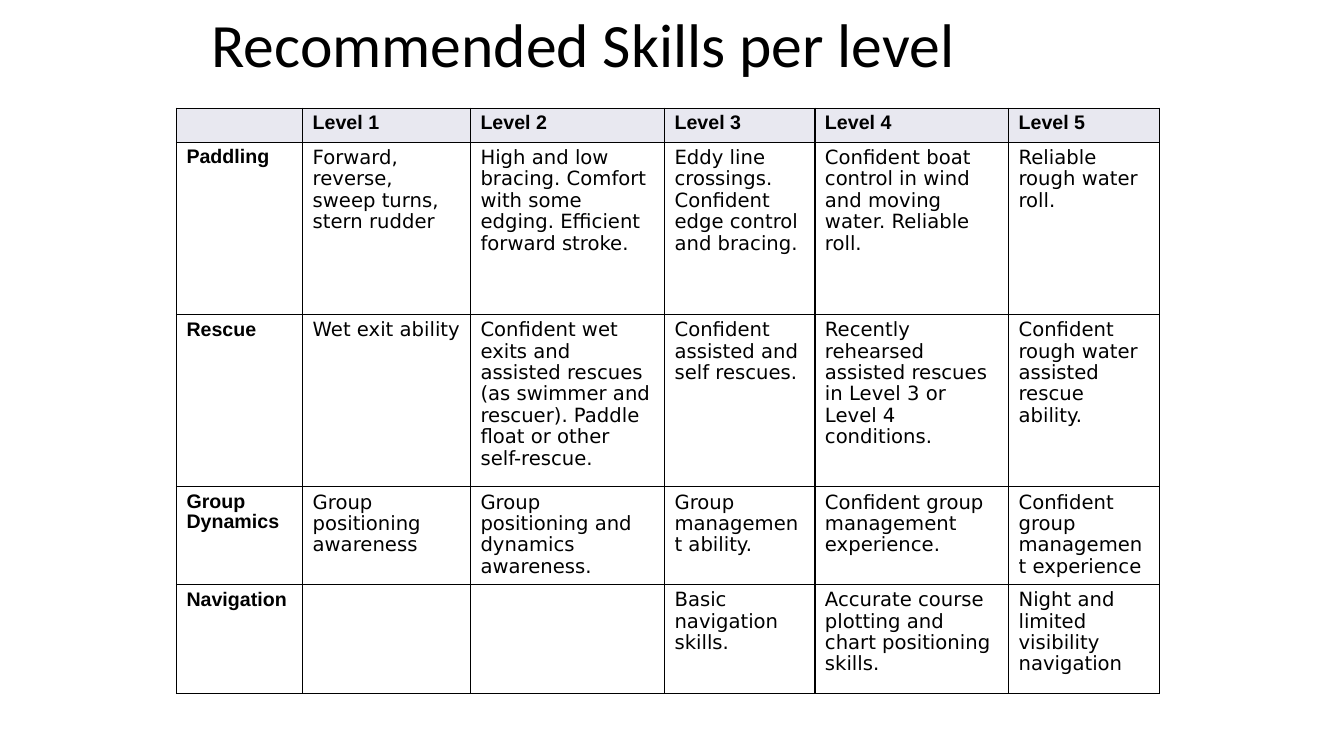
from dataclasses import dataclass

from lxml.etree import SubElement
from pptx import Presentation
from pptx.dml.color import RGBColor
from pptx.enum.text import MSO_ANCHOR
from pptx.oxml.ns import qn
from pptx.util import Cm, Pt


@dataclass(frozen=True)
class Theme:
    ink: str = "000000"
    head: str = "E8E8F0"
    title: int = 44
    body: int = 14
    edge: int = 1
    display: str = "Calibri"
    label: str = "Arial"
    prose: str = "DejaVu Sans"


THEME = Theme()
WIDTHS = [3.18, 4.23, 4.89, 3.79, 4.88, 3.81]
HEIGHTS = [0.84, 4.34, 4.34, 2.46, 2.74]
SKILLS = [
    ["", "Level 1", "Level 2", "Level 3", "Level 4", "Level 5"],
    [
        "Paddling",
        "Forward, reverse, sweep turns, stern rudder",
        "High and low bracing. Comfort with some edging. Efficient forward stroke.",
        "Eddy line crossings. Confident edge control and bracing.",
        "Confident boat control in wind and moving water. Reliable roll.",
        "Reliable rough water roll.",
    ],
    [
        "Rescue",
        "Wet exit ability",
        "Confident wet exits and assisted rescues (as swimmer and rescuer). "
        "Paddle float or other self-rescue.",
        "Confident assisted and self rescues.",
        "Recently rehearsed assisted rescues in Level 3 or Level 4 conditions.",
        "Confident rough water assisted rescue ability.",
    ],
    [
        "Group Dynamics",
        "Group positioning awareness",
        "Group positioning and dynamics awareness.",
        "Group management ability.",
        "Confident group management experience.",
        "Confident group management experience",
    ],
    [
        "Navigation",
        "",
        "",
        "Basic navigation skills.",
        "Accurate course plotting and chart positioning skills.",
        "Night and limited visibility navigation",
    ],
]


def apply(target, values):
    for name, value in values.items():
        setattr(target, name, value)


def write(frame, text, face, size, bold, spacing):
    para = frame.paragraphs[0]
    para.line_spacing = spacing
    if text:
        run = para.add_run()
        run.text = text
        apply(run.font, {"name": face, "size": Pt(size), "bold": bold})
        run.font.color.rgb = RGBColor.from_string(THEME.ink)
    else:
        SubElement(para._p, qn("a:endParaRPr"), sz=str(size * 100))


def border(cell):
    props = cell._tc.get_or_add_tcPr()
    for side in ("lnL", "lnR", "lnT", "lnB"):
        line = SubElement(props, qn(f"a:{side}"), w=str(Pt(THEME.edge)))
        fill = SubElement(line, qn("a:solidFill"))
        SubElement(fill, qn("a:srgbClr"), val=THEME.ink)


def add_title(slide, text):
    box = slide.shapes.add_textbox(Cm(5.08), Cm(0), Cm(24.13), Cm(2.41))
    apply(box.text_frame, {"word_wrap": True, "vertical_anchor": MSO_ANCHOR.MIDDLE})
    write(box.text_frame, text, THEME.display, THEME.title, False, 0.9)


def fill_cell(cell, text, header, label):
    border(cell)
    if header:
        cell.fill.solid()
        cell.fill.fore_color.rgb = RGBColor.from_string(THEME.head)
    else:
        cell.fill.background()
    apply(cell, {
        "margin_left": Cm(0.25),
        "margin_right": Cm(0.25),
        "margin_top": Cm(0.13),
        "margin_bottom": Cm(0.13),
    })
    face = THEME.label if label else THEME.prose
    write(cell.text_frame, text, face, THEME.body, label, 0.93)


def add_grid(slide, rows):
    frame = slide.shapes.add_table(
        len(rows), len(WIDTHS), Cm(4.45), Cm(2.73), Cm(sum(WIDTHS)), Cm(sum(HEIGHTS))
    )
    table = frame.table
    apply(table, {"first_row": False, "horz_banding": False})
    for column, width in zip(table.columns, WIDTHS):
        column.width = Cm(width)
    for row, height in zip(table.rows, HEIGHTS):
        row.height = Cm(height)
    for r, row in enumerate(rows):
        for c, text in enumerate(row):
            fill_cell(table.cell(r, c), text, r == 0, r == 0 or c == 0)


def main():
    deck = Presentation()
    apply(deck, {"slide_width": Cm(33.87), "slide_height": Cm(19.05)})
    slide = deck.slides.add_slide(deck.slide_layouts[6])
    add_title(slide, "Recommended Skills per level")
    add_grid(slide, SKILLS)
    deck.save("out.pptx")


if __name__ == "__main__":
    main()
